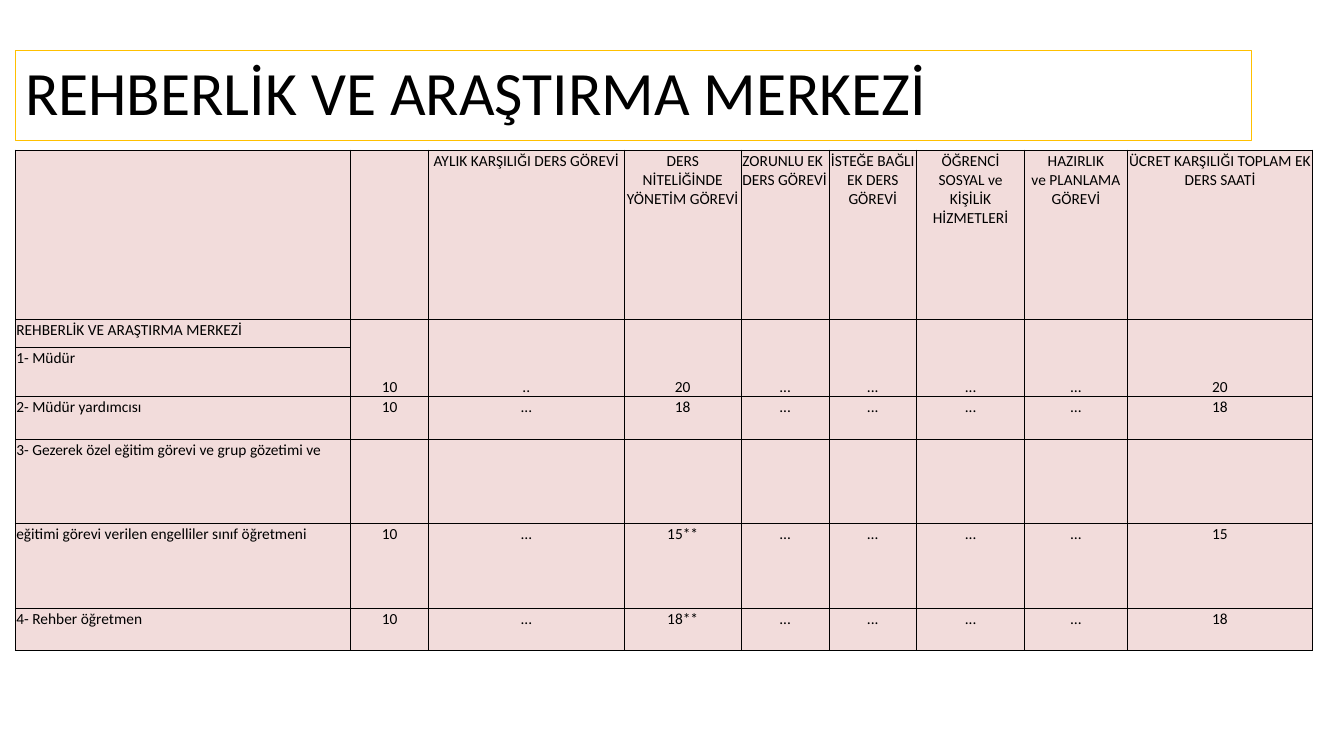
from lxml.etree import SubElement
from pptx import Presentation
from pptx.dml.color import RGBColor
from pptx.enum.text import MSO_ANCHOR, MSO_AUTO_SIZE, PP_ALIGN
from pptx.oxml.ns import qn
from pptx.util import Cm, Pt

COLORS = {"text": "000000", "border": "000000", "cell": "F2DCDB", "frame": "FFC000"}
FONT = "Calibri"
COL_WIDTHS = [8.46, 1.96, 4.93, 2.95, 2.21, 2.21, 2.72, 2.59, 4.67]
ROW_HEIGHTS = [4.27, 0.71, 1.24, 1.07, 2.13, 2.13, 1.07]
ROWS = [
    ["", "", "AYLIK KARŞILIĞI DERS GÖREVİ", "DERS NİTELİĞİNDE YÖNETİM GÖREVİ",
     "ZORUNLU EK DERS GÖREVİ", "İSTEĞE BAĞLI EK DERS GÖREVİ",
     "ÖĞRENCİ SOSYAL ve KİŞİLİK HİZMETLERİ", "HAZIRLIK\vve PLANLAMA GÖREVİ",
     "ÜCRET KARŞILIĞI TOPLAM EK DERS SAATİ"],
    ["REHBERLİK VE ARAŞTIRMA MERKEZİ", "10", "..", "20", "...", "...", "...", "…", "20"],
    ["1- Müdür"],
    ["2- Müdür yardımcısı", "10", "...", "18", "...", "...", "...", "…", "18"],
    ["3- Gezerek özel eğitim görevi ve grup gözetimi ve"],
    ["eğitimi görevi verilen engelliler sınıf öğretmeni",
     "10", "…", "15**", "…", "…", "…", "…", "15"],
    ["4- Rehber öğretmen", "10", "...", "18**", "...", "...", "...", "…", "18"],
]
MERGED_ROW = 1
LEFT_HEADER_COL = 4


def rgb(name):
    return RGBColor.from_string(COLORS[name])


def style_paragraph(p, size, align):
    p.alignment = align
    p.font.name = FONT
    p.font.size = Pt(size)
    p.font.color.rgb = rgb("text")


def add_title(s, text):
    title = s.shapes.title
    title.left, title.top, title.width, title.height = Cm(0.38), Cm(1.27), Cm(31.17), Cm(2.26)
    title.line.color.rgb = rgb("frame")
    title.line.width = Pt(0.75)
    tf = title.text_frame
    tf.text = text
    tf.word_wrap = True
    tf.auto_size = MSO_AUTO_SIZE.NONE
    tf.vertical_anchor = MSO_ANCHOR.MIDDLE
    p = tf.paragraphs[0]
    p.line_spacing = 0.9
    style_paragraph(p, 44, PP_ALIGN.LEFT)


def add_borders(cell):
    """Draw all four sides; must run before the fill is set."""
    tc_pr = cell._tc.get_or_add_tcPr()
    for side in ("a:lnL", "a:lnR", "a:lnT", "a:lnB"):
        ln = SubElement(tc_pr, qn(side), w=str(Pt(0.5)))
        fill = SubElement(ln, qn("a:solidFill"))
        SubElement(fill, qn("a:srgbClr"), val=COLORS["border"])


def format_cell(cell, text, align):
    cell.text = text
    cell.margin_left = cell.margin_right = cell.margin_top = Cm(0.03)
    cell.margin_bottom = 0
    add_borders(cell)
    cell.fill.solid()
    cell.fill.fore_color.rgb = rgb("cell")
    style_paragraph(cell.text_frame.paragraphs[0], 11, align)


def add_hours_table(s):
    frame = s.shapes.add_table(len(ROWS), len(COL_WIDTHS), Cm(0.38), Cm(3.78),
                               Cm(sum(COL_WIDTHS)), Cm(sum(ROW_HEIGHTS)))
    table = frame.table
    table.first_row = table.horz_banding = False
    for column, width in zip(table.columns, COL_WIDTHS):
        column.width = Cm(width)
    for r, height in enumerate(ROW_HEIGHTS):
        table.rows[r].height = Cm(height)
        for c in range(len(COL_WIDTHS)):
            text = ROWS[r][c] if c < len(ROWS[r]) else ""
            is_left = c == 0 or (r == 0 and c == LEFT_HEADER_COL)
            format_cell(table.cell(r, c), text, PP_ALIGN.LEFT if is_left else PP_ALIGN.CENTER)
    for c in range(1, len(COL_WIDTHS)):
        cell = table.cell(MERGED_ROW, c)
        cell.merge(table.cell(MERGED_ROW + 1, c))
        cell.vertical_anchor = MSO_ANCHOR.BOTTOM


def main():
    prs = Presentation()
    prs.slide_width, prs.slide_height = Cm(33.87), Cm(19.05)
    s = prs.slides.add_slide(prs.slide_layouts.get_by_name("Title Only"))
    add_title(s, "REHBERLİK VE ARAŞTIRMA MERKEZİ")
    add_hours_table(s)
    prs.save("out.pptx")


if __name__ == "__main__":
    main()
